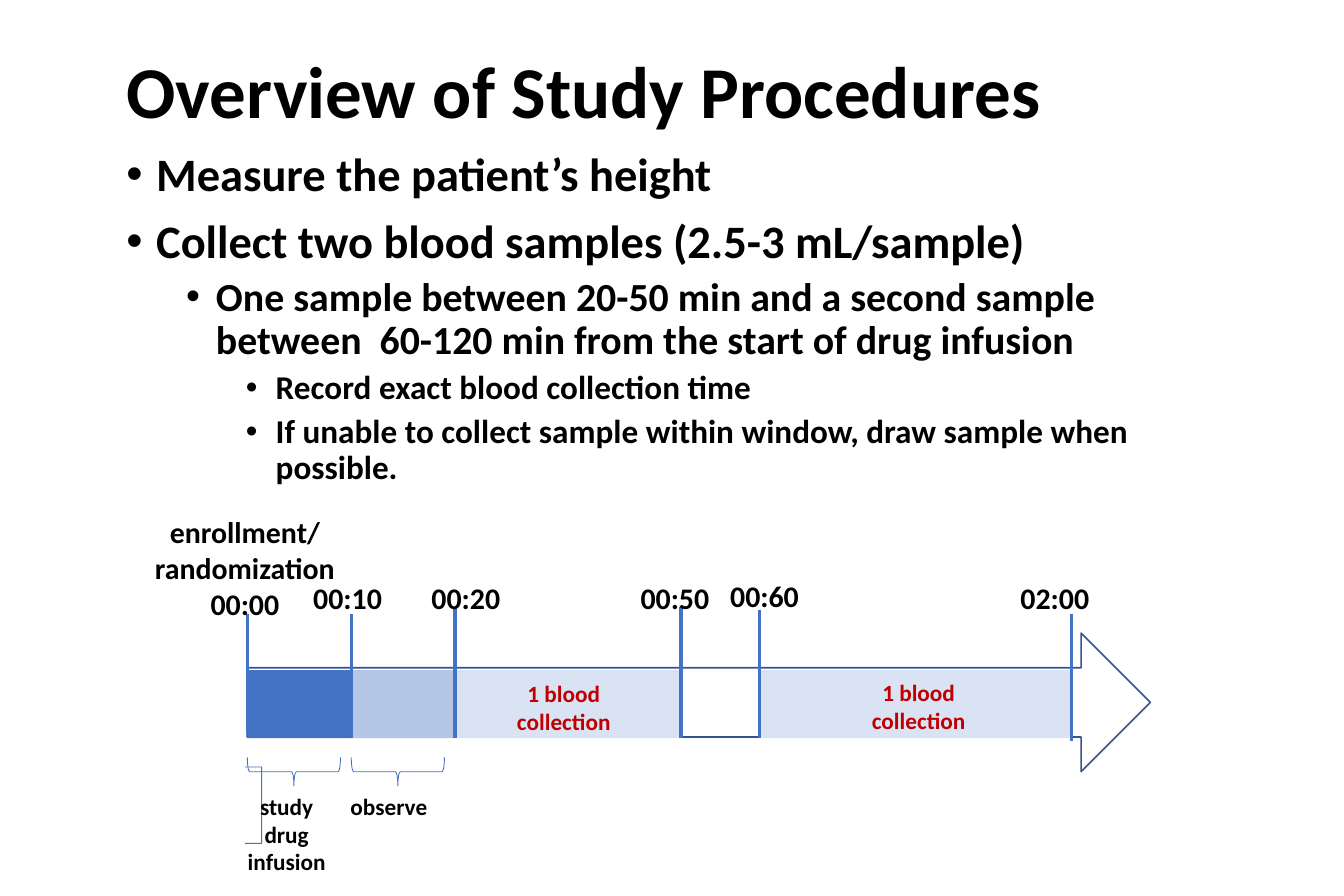
from lxml import etree
from pptx import Presentation
from pptx import util as u
from pptx.dml.color import RGBColor
from pptx.enum import shapes, text
from pptx.oxml.ns import qn

COLORS = {"black": "000000", "red": "C00000", "blue": "4472C4", "outline": "325491",
          "medium": "B4C7E7", "pale": "DAE3F3"}
FONT = "Calibri"

deck = Presentation()
deck.slide_width, deck.slide_height = u.Inches(11.25), u.Inches(7.5)
page = deck.slides.add_slide(deck.slide_layouts[5])


def add_text(left, top, width, height, lines, size, color="black"):
    box = page.shapes.add_textbox(*map(u.Inches, (left, top, width, height)))
    frame = box.text_frame
    frame.word_wrap = False
    for i, line in enumerate(lines):
        para = frame.paragraphs[0] if i == 0 else frame.add_paragraph()
        para.alignment = text.PP_ALIGN.CENTER
        span = para.add_run()
        span.text = line
        span.font.name, span.font.size, span.font.bold = FONT, u.Pt(size), True
        span.font.color.rgb = RGBColor.from_string(COLORS[color])


def add_shape(kind, left, top, width, height, fill=None, line=None, weight=1):
    shape = page.shapes.add_shape(kind, *map(u.Inches, (left, top, width, height)))
    shape.shadow.inherit = False
    for part, color in ((shape.fill, fill), (shape.line.fill, line)):
        if color:
            part.solid()
            part.fore_color.rgb = RGBColor.from_string(COLORS[color])
        else:
            part.background()
    if line:
        shape.line.width = u.Pt(weight)
    return shape


# Title
title = page.shapes.title
title.left, title.top, title.width, title.height = map(u.Inches, (0.96, 0.25, 9, 1.08))
title.text_frame.vertical_anchor = text.MSO_ANCHOR.MIDDLE
para = title.text_frame.paragraphs[0]
para.alignment, para.line_spacing = text.PP_ALIGN.LEFT, 0.9
span = para.add_run()
span.text = "Overview of Study Procedures"
span.font.name, span.font.size, span.font.bold = FONT, u.Pt(44), True
span.font.color.rgb = RGBColor.from_string(COLORS["black"])

# Procedure bullets: level and wording
procedures = [
    (0, "Measure the patient’s height"),
    (0, "Collect two blood samples (2.5-3 mL/sample)"),
    (1, "One sample between 20-50 min and a second sample between  60-120 min "
        "from the start of drug infusion"),
    (2, "Record exact blood collection time"),
    (2, "If unable to collect sample within window, draw sample when possible."),
]
body = page.shapes.add_textbox(*map(u.Inches, (0.96, 1.22, 9.56, 3)))
body.text_frame.word_wrap = True
for i, (level, wording) in enumerate(procedures):
    para = body.text_frame.paragraphs[0] if i == 0 else body.text_frame.add_paragraph()
    para.level, para.line_spacing = level, 0.9
    para.space_before = u.Pt(5 if level else 10)
    span = para.add_run()
    span.text = wording
    span.font.name, span.font.size, span.font.bold = FONT, u.Pt(28 - 4 * level), True
    span.font.color.rgb = RGBColor.from_string(COLORS["black"])
    props = para._p.get_or_add_pPr()
    props.set("marL", str(u.Inches(0.25 + 0.5 * level)))
    props.set("indent", str(u.Inches(-0.25)))
    etree.SubElement(props, qn("a:buFont"), typeface="Arial")
    etree.SubElement(props, qn("a:buChar"), char="•")

# Timeline arrow and its periods
add_shape(shapes.MSO_SHAPE.RIGHT_ARROW, 2.07, 5.3, 7.56, 1.16, line="outline")
for start, end, fill in ((2.07, 2.94, "blue"), (2.94, 3.81, "medium"),
                         (3.81, 5.7, "pale"), (6.36, 8.98, "pale")):
    add_shape(shapes.MSO_SHAPE.RECTANGLE, start, 5.61, end - start, 0.57, fill=fill)

# Braces under the first two periods, and the narrow upright one
for left in (2.34, 3.21):
    brace = add_shape(shapes.MSO_SHAPE.RIGHT_BRACE, left, 6.07, 0.24, 0.78,
                      line="blue", weight=0.5)
    brace.rotation = 90
upright = add_shape(shapes.MSO_SHAPE.RIGHT_BRACE, 2.05, 6.42, 0.28, 0.64,
                    line="blue", weight=0.5)
upright.adjustments[0] = 0

# Time marks
for x, top, bottom in ((2.07, 5.14, 6.14), (2.94, 5.14, 6.18), (3.81, 5.08, 6.18),
                       (5.7, 5.08, 6.18), (6.36, 5.11, 6.18), (8.97, 5.14, 6.2)):
    mark = page.shapes.add_connector(shapes.MSO_CONNECTOR.STRAIGHT,
                                     *map(u.Inches, (x, top, x, bottom)))
    mark.line.color.rgb = RGBColor.from_string(COLORS["blue"])
    mark.line.width = u.Pt(2)
    etree.SubElement(mark._element.spPr, qn("a:effectLst"))

# Time labels
add_text(1.19, 4.25, 1.72, 1.01, ["enrollment/", "randomization", "00:00"], 18)
for left, top, time in ((2.52, 4.8, "00:10"), (3.51, 4.8, "00:20"), (5.26, 4.8, "00:50"),
                        (6.01, 4.79, "00:60"), (8.44, 4.8, "02:00")):
    add_text(left, top, 0.78, 0.4, [time], 18)

# Period labels
add_text(1.97, 6.58, 0.86, 0.81, ["study", "drug", "infusion"], 14)
add_text(2.81, 6.58, 0.89, 0.34, ["observe"], 14)
for left, top in ((4.22, 5.64), (7.19, 5.63)):
    add_text(left, top, 1, 0.57, ["1 blood", "collection"], 14, "red")

deck.save("out.pptx")
